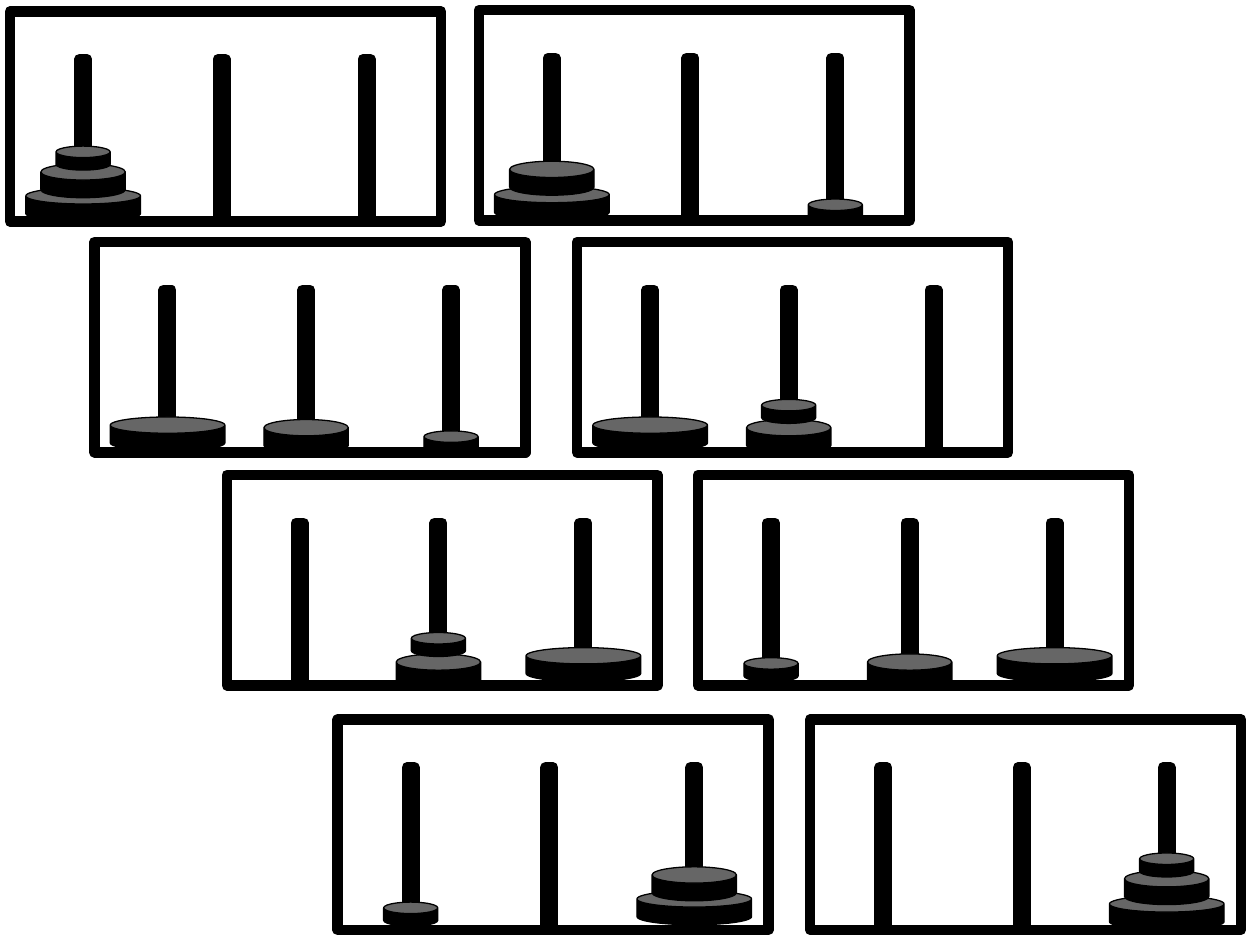
from pptx import Presentation
from pptx import util as u
from pptx.dml import color
from pptx.enum import shapes

COLORS = {"ink": "000000"}
FRAME_SIZE = (3.42, 1.67)
PEG_SIZE = (0.06, 1.29)
PEG_TOP = 0.38
PEG_CENTERS = (0.58, 1.68, 2.83)
DISK_SIZES = {"large": (0.91, 0.27), "medium": (0.67, 0.27), "small": (0.43, 0.19)}
LID_RATIO = 0.479

# Each state of the puzzle: frame left, frame top, disks as (size, peg, top in frame)
STATES = [
    (0.08, 0.09, [("large", 0, 1.40), ("medium", 0, 1.21), ("small", 0, 1.07)]),
    (3.80, 0.08, [("large", 0, 1.40), ("medium", 0, 1.20), ("small", 2, 1.50)]),
    (0.75, 1.92, [("large", 0, 1.39), ("medium", 1, 1.41), ("small", 2, 1.50)]),
    (4.58, 1.92, [("large", 0, 1.39), ("medium", 1, 1.41), ("small", 1, 1.25)]),
    (1.80, 3.77, [("large", 2, 1.37), ("medium", 1, 1.42), ("small", 1, 1.25)]),
    (5.54, 3.77, [("large", 2, 1.37), ("medium", 1, 1.42), ("small", 0, 1.45)]),
    (2.68, 5.71, [("large", 2, 1.36), ("medium", 2, 1.17), ("small", 0, 1.45)]),
    (6.43, 5.71, [("large", 2, 1.40), ("medium", 2, 1.20), ("small", 2, 1.06)]),
]


class HanoiSlide:
    """Holds the style and the slide that the puzzle states are drawn on."""

    def __init__(self, slide, colors):
        self.slide = slide
        self.ink = color.RGBColor.from_string(colors["ink"])

    def solid(self, group, kind, left, top, size, line_width, filled=True):
        shape = group.shapes.add_shape(
            kind, u.Inches(left), u.Inches(top), *map(u.Inches, size))
        shape.shadow.inherit = False
        if filled:
            shape.fill.solid()
            shape.fill.fore_color.rgb = self.ink
        else:
            shape.fill.background()
        shape.line.color.rgb = self.ink
        shape.line.width = u.Pt(line_width)
        return shape

    def frame(self, group, left, top):
        self.solid(group, shapes.MSO_SHAPE.RECTANGLE, left, top, FRAME_SIZE, 6, filled=False)

    def peg(self, group, center, top):
        self.solid(group, shapes.MSO_SHAPE.RECTANGLE, center - PEG_SIZE[0] / 2, top, PEG_SIZE, 6)

    def disk(self, group, center, top, size):
        can = self.solid(group, shapes.MSO_SHAPE.CAN, center - size[0] / 2, top, size, 0.75)
        can.adjustments[0] = LID_RATIO

    def state(self, left, top, disks):
        group = self.slide.shapes.add_group_shape()
        self.frame(group, left, top)
        for center in PEG_CENTERS:
            self.peg(group, left + center, top + PEG_TOP)
        for size, peg, disk_top in disks:
            self.disk(group, left + PEG_CENTERS[peg], top + disk_top, DISK_SIZES[size])


def main():
    deck = Presentation()
    deck.slide_width, deck.slide_height = u.Inches(10), u.Inches(7.5)
    hanoi = HanoiSlide(deck.slides.add_slide(deck.slide_layouts[6]), COLORS)

    # The solution, from the first state to the last
    for left, top, disks in STATES:
        hanoi.state(left, top, disks)

    deck.save("out.pptx")


if __name__ == "__main__":
    main()
